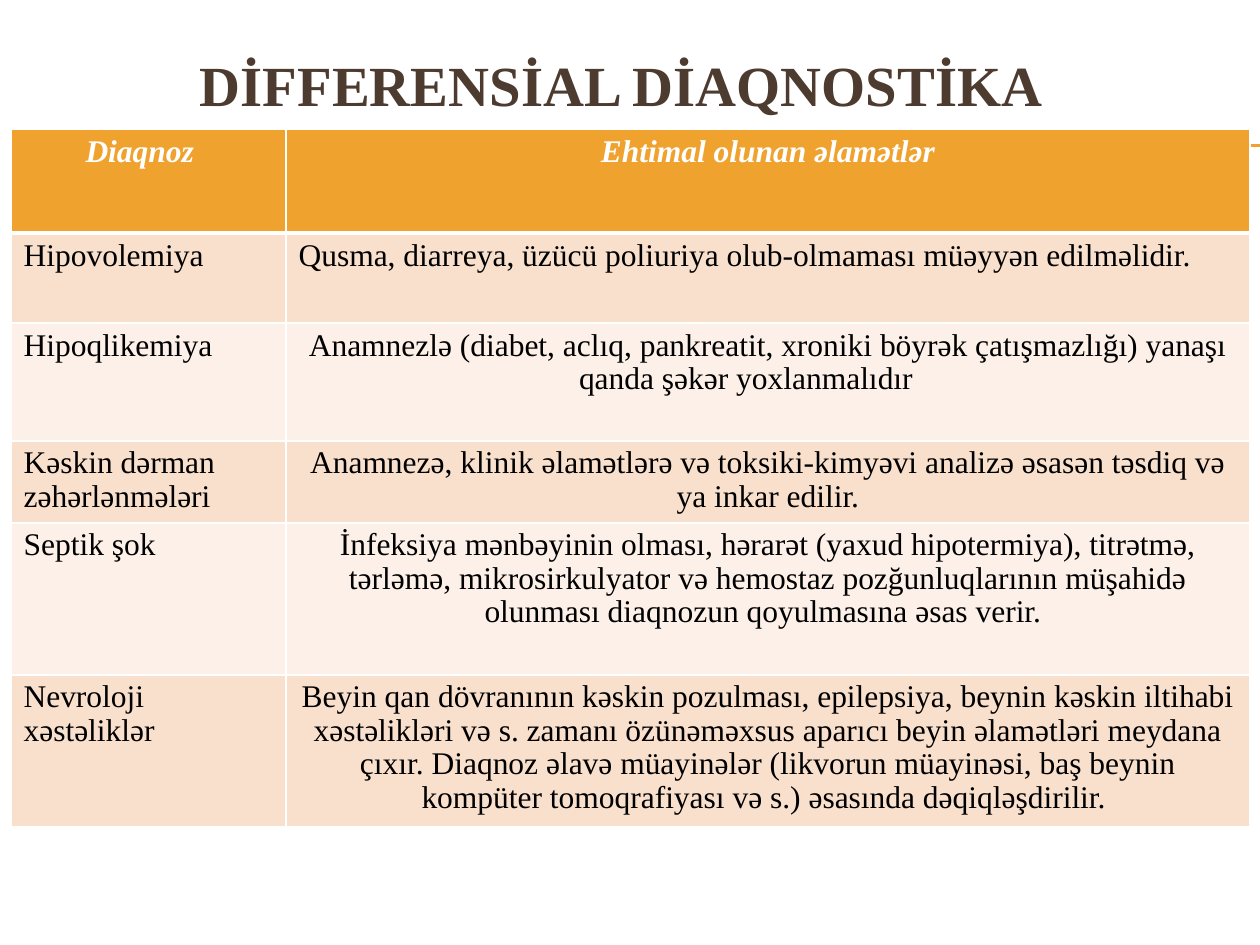
from lxml import etree
from pptx import Presentation
from pptx import util as u
from pptx.dml.color import RGBColor
from pptx.enum import shapes, text
from pptx.oxml import ns

PX = 914400 / 126
THEME = {
    "font": "Times New Roman",
    "accent": "F0A22E",
    "title": "4E3B30",
    "body": "000000",
    "white": "FFFFFF",
    "bands": ("F9E0CD", "FCF0E8"),
    "title_size": 32.4,
    "body_size": 18,
}


def px(value):
    return u.Emu(round(value * PX))


def style_font(font, color, **values):
    font.color.rgb = RGBColor.from_string(color)
    for key, value in {"name": THEME["font"], **values}.items():
        setattr(font, key, value)


deck = Presentation()
deck.slide_width, deck.slide_height = px(1260), px(945)
slide = deck.slides.add_slide(deck.slide_layouts[5])

heading = slide.shapes.title
for key, value in {"left": 63, "top": 29, "width": 1128, "height": 98}.items():
    setattr(heading, key, px(value))
frame = heading.text_frame
frame.text = "DİFFERENSİAL DİAQNOSTİKA"
for key, value in {"margin_top": px(12), "margin_bottom": 0, "margin_right": px(24),
                   "vertical_anchor": text.MSO_ANCHOR.MIDDLE, "word_wrap": True}.items():
    setattr(frame, key, value)
frame.paragraphs[0].alignment = text.PP_ALIGN.CENTER
style_font(frame.paragraphs[0].runs[0].font, THEME["title"],
           size=u.Pt(THEME["title_size"]), bold=True)

for y in (145, 146):
    rule = slide.shapes.add_connector(shapes.MSO_CONNECTOR.STRAIGHT,
                                      px(71), px(y), px(1260), px(y))
    rule.line.color.rgb = RGBColor.from_string(THEME["accent"])
    rule.line.width = u.Pt(0.75)
    etree.SubElement(rule.line._get_or_add_ln().getparent(), ns.qn("a:effectLst"))

diagnoses = [
    ("Diaqnoz \t", "Ehtimal olunan əlamətlər"),
    ("Hipovolemiya",
     "Qusma, diarreya, üzücü poliuriya olub-olmaması müəyyən edilməlidir. \t"),
    ("Hipoqlikemiya",
     "Anamnezlə (diabet, aclıq, pankreatit, xroniki böyrək çatışmazlığı) yanaşı "
     "qanda şəkər yoxlanmalıdır \t"),
    ("Kəskin dərman zəhərlənmələri",
     "Anamnezə, klinik əlamətlərə və toksiki-kimyəvi analizə əsasən təsdiq və "
     "ya inkar edilir."),
    ("Septik şok",
     "İnfeksiya mənbəyinin olması, hərarət (yaxud hipotermiya), titrətmə, "
     "tərləmə, mikrosirkulyator və hemostaz pozğunluqlarının müşahidə "
     "olunması diaqnozun qoyulmasına əsas verir. \t"),
    ("Nevroloji xəstəliklər",
     "Beyin qan dövranının kəskin pozulması, epilepsiya, beynin kəskin iltihabi "
     "xəstəlikləri və s. zamanı özünəməxsus aparıcı beyin əlamətləri meydana "
     "çıxır. Diaqnoz əlavə müayinələr (likvorun müayinəsi, baş beynin "
     "kompüter tomoqrafiyası və s.) əsasında dəqiqləşdirilir. \t"),
]
widths = (275, 964)
heights = (104, 90, 118, 82, 152, 152)
table = slide.shapes.add_table(len(heights), len(widths), px(11), px(129),
                               px(sum(widths)), px(sum(heights))).table
for column, width in zip(table.columns, widths):
    column.width = px(width)

for r, (row, height, entries) in enumerate(zip(table.rows, heights, diagnoses)):
    row.height = px(height)
    header = r == 0
    for c, (cell, entry) in enumerate(zip(row.cells, entries)):
        cell.text = entry
        cell.fill.solid()
        cell.fill.fore_color.rgb = RGBColor.from_string(
            THEME["accent"] if header else THEME["bands"][(r - 1) % 2])
        paragraph = cell.text_frame.paragraphs[0]
        paragraph.line_spacing = 0.96
        paragraph.alignment = (text.PP_ALIGN.CENTER if header or c == 1
                               else text.PP_ALIGN.LEFT)
        style_font(paragraph.runs[0].font, THEME["white" if header else "body"],
                   size=u.Pt(THEME["body_size"]), bold=header, italic=header)
        properties = cell._tc.get_or_add_tcPr()
        for i, side in enumerate("LRTB"):
            thick = (header and side == "B") or (r == 1 and side == "T")
            border = etree.Element(ns.qn(f"a:ln{side}"), w=str(u.Pt(3 if thick else 1)))
            fill = etree.SubElement(border, ns.qn("a:solidFill"))
            etree.SubElement(fill, ns.qn("a:srgbClr"), val=THEME["white"])
            properties.insert(i, border)

deck.save("out.pptx")
